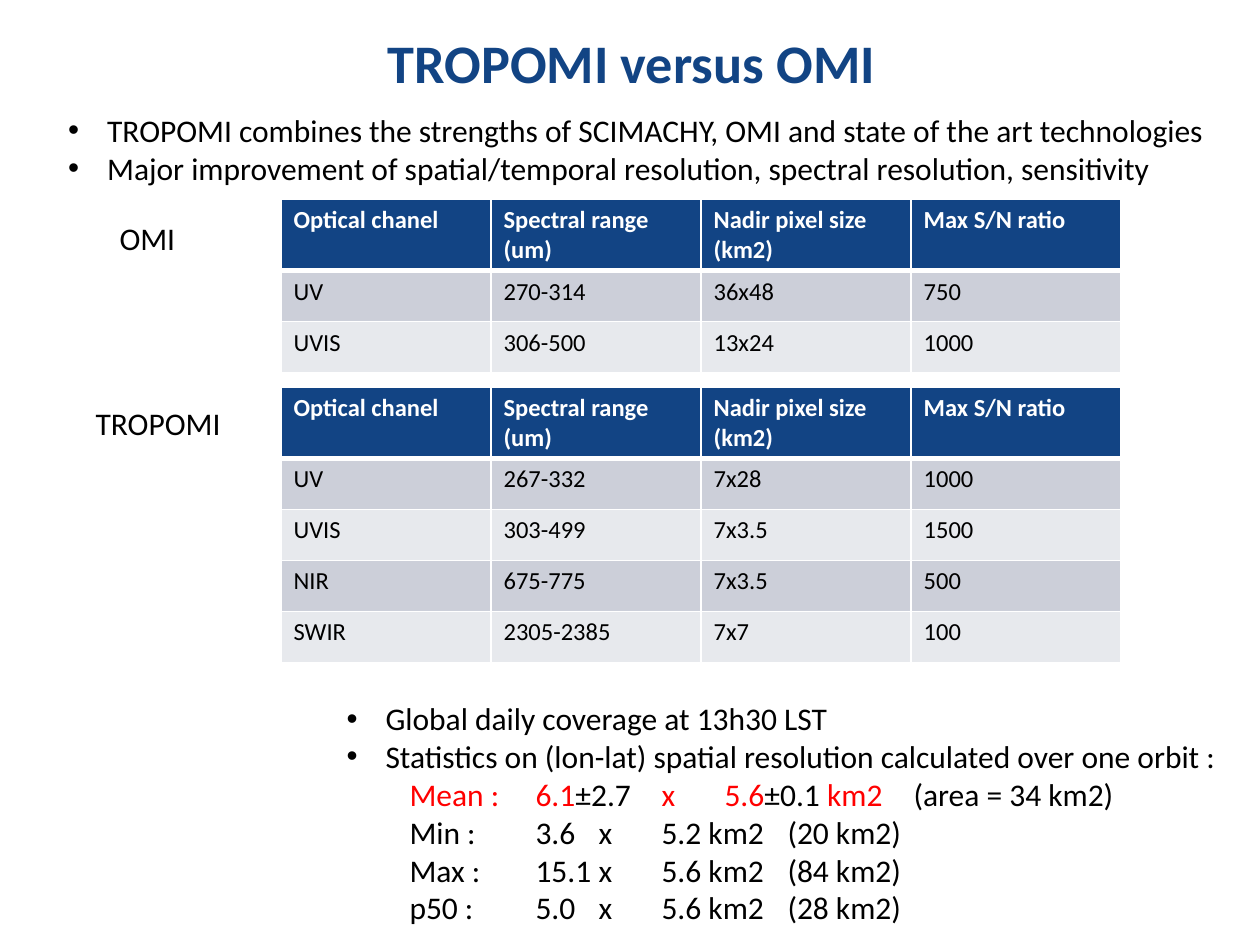
from dataclasses import dataclass

from lxml.etree import SubElement
from pptx import Presentation
from pptx.dml.color import RGBColor
from pptx.enum.text import MSO_ANCHOR, MSO_AUTO_SIZE, PP_ALIGN
from pptx.oxml.ns import qn
from pptx.util import Inches, Pt


@dataclass(frozen=True)
class Theme:
    """Colours, font and type sizes of the slide."""
    font: str = "Calibri"
    navy: str = "124484"
    black: str = "000000"
    white: str = "FFFFFF"
    red: str = "FF0000"
    bands: tuple = ("CCCFD9", "E7E9ED")
    title_size: int = 31
    body_size: int = 18
    table_size: int = 14


class SlideBuilder:
    """Adds styled elements to the current slide."""

    def __init__(self, slide, theme):
        self.slide = slide
        self.theme = theme

    def place(self, element, box):
        element.left, element.top, element.width, element.height = map(Inches, box)

    def run(self, paragraph, text, size, color, bold=False):
        run = paragraph.add_run()
        run.text = text
        run.font.name = self.theme.font
        run.font.size = Pt(size)
        run.font.bold = bold
        run.font.color.rgb = RGBColor.from_string(color)

    def title(self, text, box):
        title = self.slide.shapes.title
        self.place(title, box)
        frame = title.text_frame
        frame.auto_size = MSO_AUTO_SIZE.NONE
        frame.vertical_anchor = MSO_ANCHOR.MIDDLE
        paragraph = frame.paragraphs[0]
        paragraph.alignment = PP_ALIGN.CENTER
        paragraph.line_spacing = Pt(35)
        self.run(paragraph, text, self.theme.title_size, self.theme.navy, True)

    def body(self, index, box, bullets, rows=(), stops=()):
        body = self.slide.placeholders[index]
        self.place(body, box)
        frame = body.text_frame
        frame.word_wrap = True
        frame.auto_size = MSO_AUTO_SIZE.SHAPE_TO_FIT_TEXT
        lines = [[(text, self.theme.black)] for text in bullets] + list(rows)
        for number, runs in enumerate(lines):
            paragraph = frame.add_paragraph() if number else frame.paragraphs[0]
            if number < len(bullets):
                self.bullet(paragraph)
            else:
                self.tabbed(paragraph, stops)
            paragraph.space_before = Pt(0)
            for text, color in runs:
                self.run(paragraph, text, self.theme.body_size, color)

    def bullet(self, paragraph):
        properties = paragraph._p.get_or_add_pPr()
        properties.set("marL", str(Inches(0.31)))
        properties.set("indent", str(Inches(-0.31)))
        SubElement(properties, qn("a:buFont"), typeface="Arial")
        SubElement(properties, qn("a:buChar"), char="•")

    def tabbed(self, paragraph, stops):
        paragraph.level = 1
        properties = paragraph._p.get_or_add_pPr()
        properties.set("marL", str(Inches(0.5)))
        properties.set("indent", "0")
        SubElement(properties, qn("a:buNone"))
        tabs = SubElement(properties, qn("a:tabLst"))
        for stop in stops:
            SubElement(tabs, qn("a:tab"), pos=str(Inches(stop)), algn="l")

    def label(self, text, box):
        label = self.slide.shapes.add_textbox(*map(Inches, box))
        label.text_frame.word_wrap = False
        label.text_frame.auto_size = MSO_AUTO_SIZE.SHAPE_TO_FIT_TEXT
        self.run(label.text_frame.paragraphs[0], text, self.theme.body_size, self.theme.black)

    def borders(self, cell, top, bottom):
        properties = cell._tc.get_or_add_tcPr()
        for side, width in (("L", 1), ("R", 1), ("T", top), ("B", bottom)):
            line = SubElement(properties, qn(f"a:ln{side}"), w=str(Pt(width)))
            fill = SubElement(line, qn("a:solidFill"))
            SubElement(fill, qn("a:srgbClr"), val=self.theme.white)

    def table(self, left, top, header, records):
        theme = self.theme
        column_width, header_height, row_height = 1.667, 0.56, 0.405
        rows = [header, *records]
        table = self.slide.shapes.add_table(
            len(rows), len(header), Inches(left), Inches(top),
            Inches(column_width * len(header)),
            Inches(header_height + row_height * len(records))).table
        table.horz_banding = False
        for column in table.columns:
            column.width = Inches(column_width)
        for r, values in enumerate(rows):
            is_header = r == 0
            table.rows[r].height = Inches(header_height if is_header else row_height)
            fill = theme.navy if is_header else theme.bands[(r - 1) % 2]
            color = theme.white if is_header else theme.black
            for c, value in enumerate(values):
                cell = table.cell(r, c)
                self.borders(cell, 3 if r == 1 else 1, 3 if is_header else 1)
                cell.fill.solid()
                cell.fill.fore_color.rgb = RGBColor.from_string(fill)
                self.run(cell.text_frame.paragraphs[0], value, theme.table_size, color, is_header)


def main():
    """Build the instrument comparison slide."""
    presentation = Presentation()
    presentation.slide_width, presentation.slide_height = Inches(10), Inches(7.5)
    theme = Theme()
    builder = SlideBuilder(presentation.slides.add_slide(presentation.slide_layouts[3]), theme)

    builder.title("TROPOMI versus OMI", (0.51, 0, 9, 1.01))
    header = ("Optical chanel", "Spectral range (um)", "Nadir pixel size (km2)", "Max S/N ratio")
    omi_channels = [
        ("UV", "270-314", "36x48", "750"),
        ("UVIS", "306-500", "13x24", "1000"),
    ]
    tropomi_channels = [
        ("UV", "267-332", "7x28", "1000"),
        ("UVIS", "303-499", "7x3.5", "1500"),
        ("NIR", "675-775", "7x3.5", "500"),
        ("SWIR", "2305-2385", "7x7", "100"),
    ]
    builder.table(2.23, 1.58, header, omi_channels)
    builder.table(2.23, 3.07, header, tropomi_channels)
    builder.label("OMI", (0.85, 1.69, 0.65, 0.4))
    builder.label("TROPOMI", (0.66, 3.16, 1.21, 0.4))

    builder.body(1, (0.44, 0.83, 9.48, 0.71), [
        "TROPOMI combines the strengths of SCIMACHY, OMI and state of the art technologies",
        "Major improvement of spatial/temporal resolution, spectral resolution, sensitivity",
    ])
    mean = [
        ("Mean :\t6.1", theme.red), ("±2.7\t", theme.black),
        ("x\t5.6", theme.red), ("±0.1 ", theme.black),
        ("km2", theme.red), ("\t(area = 34 km2)", theme.black),
    ]
    extremes = [
        ("Min :", "3.6", "x", "5.2 km2", "(20 km2)"),
        ("Max :", "15.1", "x", "5.6 km2", "(84 km2)"),
        ("p50 :", "5.0", "x", "5.6 km2", "(28 km2)"),
    ]
    statistics = [mean] + [[("\t".join(values), theme.black)] for values in extremes]
    builder.body(2, (2.65, 5.5, 7.23, 1.92), [
        "Global daily coverage at 13h30 LST",
        "Statistics on (lon-lat) spatial resolution calculated over one orbit :",
    ], statistics, stops=(1.5, 2.5, 3, 4.5))
    presentation.save("out.pptx")


if __name__ == "__main__":
    main()
